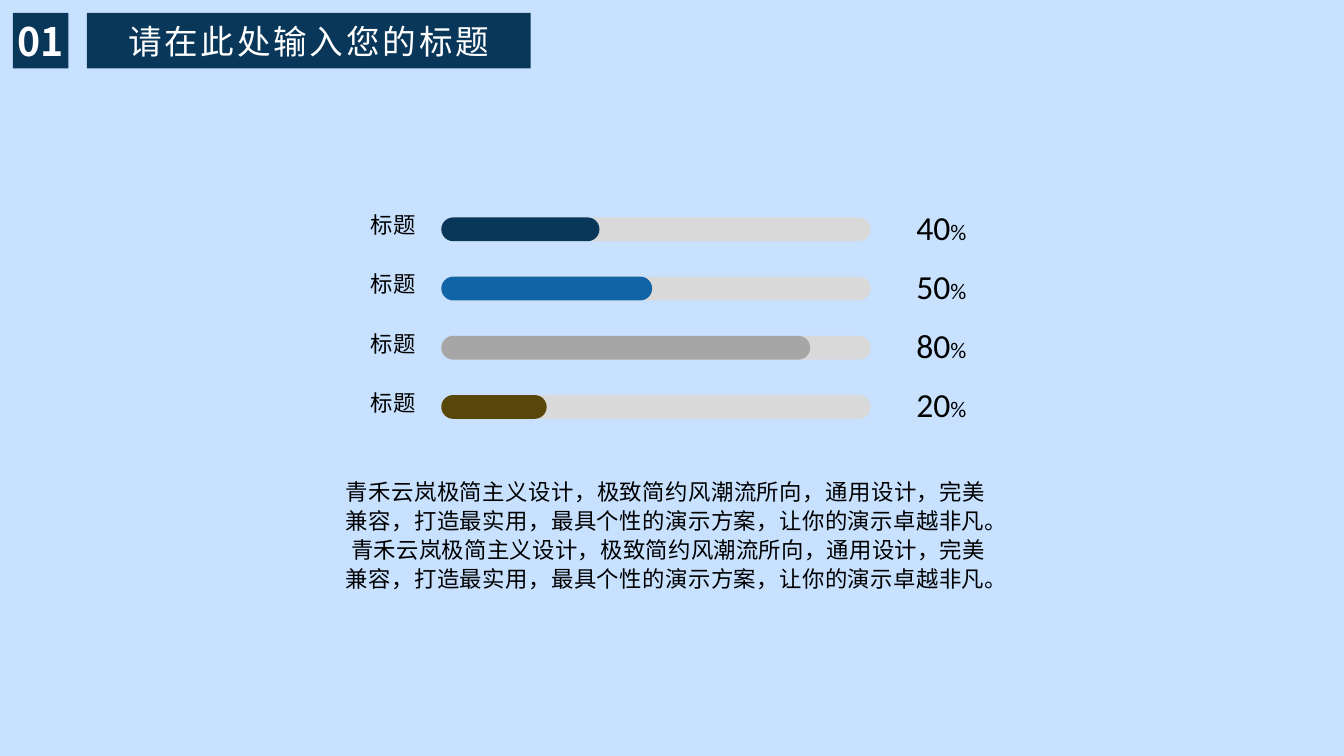
from pptx import Presentation
from pptx.dml.color import RGBColor
from pptx.enum.shapes import MSO_SHAPE
from pptx.enum.text import MSO_ANCHOR, PP_ALIGN
from pptx.oxml.ns import qn
from pptx.util import Pt
from lxml.etree import SubElement

INK = {"bg": "C7E1FF", "track": "D9D9D9", "navy": "093759", "blue": "1165A6",
       "gray": "A6A6A6", "olive": "594709", "black": "000000", "white": "FFFFFF"}
CJK = "Noto Sans CJK SC"

deck = Presentation()
deck.slide_width, deck.slide_height = Pt(960), Pt(540)
slide = deck.slides.add_slide(deck.slide_layouts[6])
slide.background.fill.solid()
slide.background.fill.fore_color.rgb = RGBColor.from_string(INK["bg"])


def block(kind, box, color):
    shape = slide.shapes.add_shape(kind, *map(Pt, box))
    shape.shadow.inherit = False
    shape.fill.solid()
    shape.fill.fore_color.rgb = RGBColor.from_string(INK[color])
    shape.line.fill.background()
    return shape


def write(shape, parts, face, color, align, inset=True, **form):
    frame = shape.text_frame
    frame.word_wrap = True
    frame.vertical_anchor = form.pop("anchor", MSO_ANCHOR.MIDDLE)
    if not inset:
        for side in ("left", "top", "right", "bottom"):
            setattr(frame, f"margin_{side}", 0)
    para = frame.paragraphs[0]
    para.alignment = align
    for text, size in parts:
        run = para.add_run()
        run.text = text
        look = {"size": Pt(size), "name": face, **form}
        for key, value in look.items():
            setattr(run.font, key, value)
        run.font.color.rgb = RGBColor.from_string(INK[color])
        SubElement(run.font._element, qn("a:ea")).set("typeface", face)
    return para


rows = [("40", 3, "navy"), ("50", 4, "blue"), ("80", 7, "gray"), ("20", 2, "olive")]
step, unit = 42.3, 37.65
for i, (value, count, color) in enumerate(rows):
    drop = i * step
    for width, tint in ((306.7, "track"), (count * unit, color)):
        bar = block(MSO_SHAPE.ROUNDED_RECTANGLE, (315.2, 155.3 + drop, width, 17), tint)
        bar.adjustments[0] = 0.5
    label = slide.shapes.add_textbox(Pt(232), Pt(146.2 + drop), Pt(72), Pt(28.8))
    write(label, [("标题", 16)], CJK, "black", PP_ALIGN.RIGHT)
    share = slide.shapes.add_textbox(Pt(654.5), Pt(148.3 + drop), Pt(57), Pt(27.4))
    write(share, [(value, 24), ("%", 16)], "Calibri", "black", PP_ALIGN.LEFT, False)

line = "青禾云岚极简主义设计，极致简约风潮流所向，通用设计，完美兼容，打造最实用，最具个性的演示方案，让你的演示卓越非凡。"
body = slide.shapes.add_textbox(Pt(239.8), Pt(336.2), Pt(471.6), Pt(100))
para = write(body, [(f"{line} {line}", 16)], CJK, "black", PP_ALIGN.JUSTIFY,
             anchor=MSO_ANCHOR.TOP)
para.line_spacing = 1.08

badge = block(MSO_SHAPE.RECTANGLE, (9.2, 9.2, 39.6, 39.6), "navy")
write(badge, [("01", 28)], CJK, "white", PP_ALIGN.CENTER, False, bold=True)
title = block(MSO_SHAPE.RECTANGLE, (62, 9.2, 317, 39.6), "navy")
para = write(title, [("请在此处输入您的标题", 24)], CJK, "white", PP_ALIGN.CENTER)
para.runs[0].font._element.set("spc", "200")

deck.save("out.pptx")
